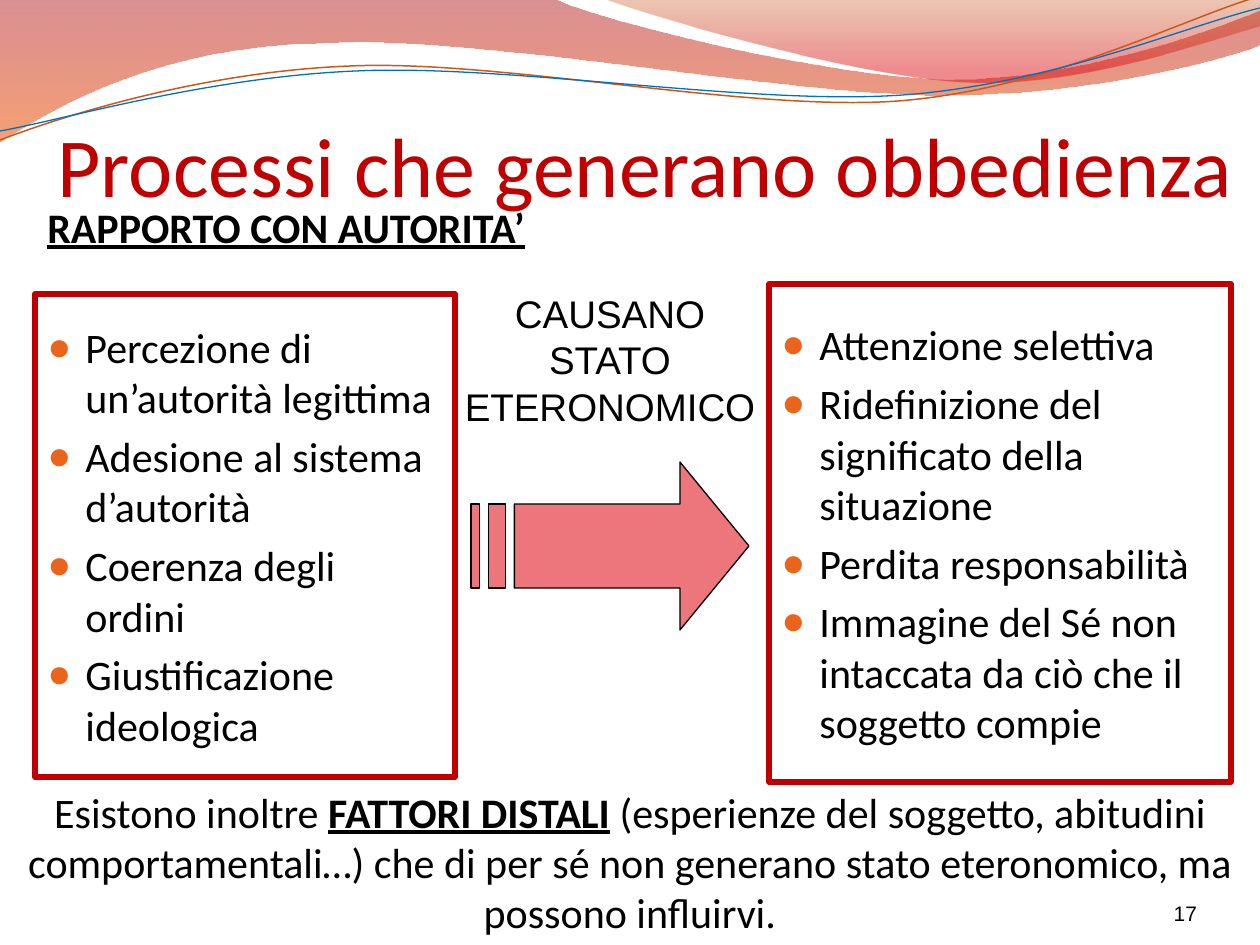
from lxml.etree import SubElement
from pptx import Presentation
from pptx.dml.color import RGBColor
from pptx.enum.shapes import MSO_SHAPE
from pptx.enum.text import MSO_ANCHOR, PP_ALIGN
from pptx.oxml.ns import qn
from pptx.util import Pt

SCALE = 914400 / 126

THEME = {
    "red": "C00000", "black": "000000", "arrow": "EC767C", "bullet": "EB641B",
    "title": 48, "body": 24, "label": 22, "number": 12,
    "font": "Calibri", "label_font": "Arial",
}

TITLE = "Processi che generano obbedienza"
HEADING = "RAPPORTO CON AUTORITA’"
LABEL = "CAUSANO STATO ETERONOMICO"
SLIDE_NUMBER = "17"
FOOTNOTE = [
    ("Esistono inoltre ", {}),
    ("FATTORI DISTALI", {"bold": True, "underline": True}),
    (" (esperienze del soggetto, abitudini comportamentali…) che di per sé "
     "non generano stato eteronomico, ma possono influirvi.", {}),
]
PANELS = [
    ((35, 294, 420, 483), [
        "Percezione di un’autorità legittima",
        "Adesione al sistema d’autorità",
        "Coerenza degli ordini",
        "Giustificazione ideologica",
    ]),
    ((769, 284, 462, 498), [
        "Attenzione selettiva",
        "Ridefinizione del significato della situazione",
        "Perdita responsabilità",
        "Immagine del Sé non intaccata da ciò che il soggetto compie",
    ]),
]

WAVES = [
    ([[(0, 0)], [(554, -1)],
      [(600, 21), (837, 79), (955, 79)], [(1074, 79), (1207, 33), (1260, 11)],
      [(1261, 45)],
      [(1239, 55), (1096, 96), (940, 95)], [(781, 95), (481, 35), (324, 43)],
      [(163, 45), (58, 105), (-1, 142)], [(0, 0)]],
     [(0, "AF0911", 45), (1, "EE5300", 55)]),
    ([[(604, -1)],
      [(641, 14), (859, 78), (969, 82)], [(1079, 87), (1211, 40), (1260, 26)],
      [(1260, 0)], [(604, -1)]],
     [(0, "C24400", 30), (0.8, "DC000B", 45)]),
]
RIBBONS = [
    ([[(0, 140)], [(60, 117), (199, 72), (349, 66)],
      [(498, 59), (747, 112), (898, 101)], [(1050, 89), (1182, 19), (1257, -3)]],
     "CF5818", 0.85),
    ([[(0, 131)], [(59, 121), (207, 77), (357, 71)],
      [(508, 64), (752, 106), (903, 95)], [(1053, 84), (1186, 26), (1260, 8)]],
     "0070C0", 0.75),
]
ARROW = (471, 462, 278, 168)
ARROW_HEAD = 69


def px(value):
    return round(value * SCALE)


def color(name):
    return RGBColor.from_string(THEME.get(name, name))


def add_outline(slide, contours, close=True):
    contours = [[(px(x), px(y)) for x, y in contour] for contour in contours]
    builder = slide.shapes.build_freeform(*contours[0][0])
    for index, contour in enumerate(contours):
        if index:
            builder.move_to(*contour[0])
        builder.add_line_segments(contour[1:], close=close)
    shape = builder.convert_to_shape()
    shape.shadow.inherit = False
    return shape


def add_curve(slide, segments, close):
    points = [point for segment in segments for point in segment]
    shape = add_outline(slide, [points], close)
    lines = iter(list(shape._element.spPr.iter(qn("a:lnTo"))))
    for segment in segments[1:]:
        group = [next(lines) for _ in segment]
        if len(group) == 3:
            curve = group[0].makeelement(qn("a:cubicBezTo"))
            group[0].addprevious(curve)
            for line in group:
                curve.append(line[0])
                line.getparent().remove(line)
    return shape


def set_line(shape, name, width):
    shape.line.color.rgb = color(name)
    shape.line.width = Pt(width)


def add_wave(slide, segments, stops):
    shape = add_curve(slide, segments, close=True)
    shape.line.fill.background()
    shape.fill.gradient()
    shape.fill.gradient_angle = 270
    for stop, (position, rgb, _) in zip(shape.fill.gradient_stops, stops):
        stop.position = position
        stop.color.rgb = color(rgb)
    for element, (_, _, alpha) in zip(shape._element.spPr.iter(qn("a:srgbClr")), stops):
        SubElement(element, qn("a:alpha"), val=str(alpha * 1000))


def add_ribbon(slide, segments, rgb, width):
    shape = add_curve(slide, segments, close=False)
    shape.fill.background()
    set_line(shape, rgb, width)


def add_arrow(slide):
    left, top, width, height = ARROW
    right, bottom, neck = left + width, top + height, left + width - ARROW_HEAD
    upper, lower = top + height / 4, bottom - height / 4
    unit = width / 32
    shaft = left + 5 * unit
    contours = [[(neck, top), (neck, upper), (shaft, upper), (shaft, lower),
                 (neck, lower), (neck, bottom), (right, top + height / 2)]]
    for start, end in ((2, 4), (0, 1)):
        x1, x2 = left + start * unit, left + end * unit
        contours.append([(x1, upper), (x1, lower), (x2, lower), (x2, upper)])
    shape = add_outline(slide, contours)
    shape.fill.solid()
    shape.fill.fore_color.rgb = color("arrow")
    set_line(shape, "black", 0.75)


def write(paragraph, runs, size="body", font="font", ink="black"):
    for text, extra in runs:
        run = paragraph.add_run()
        run.text = text
        run.font.color.rgb = color(ink)
        values = {"name": THEME[font], "size": Pt(THEME[size]), **extra}
        for name, value in values.items():
            setattr(run.font, name, value)


def add_text(slide, box, runs, align, frame_format=None, **style):
    frame = slide.shapes.add_textbox(*map(px, box)).text_frame
    for name, value in {"word_wrap": True, **(frame_format or {})}.items():
        setattr(frame, name, value)
    frame.paragraphs[0].alignment = align
    write(frame.paragraphs[0], runs, **style)


def add_panel(slide, box, items):
    shape = slide.shapes.add_shape(MSO_SHAPE.RECTANGLE, *map(px, box))
    shape.shadow.inherit = False
    shape.fill.background()
    set_line(shape, "red", 3)
    SubElement(shape.line._get_or_add_ln(), qn("a:round"))
    frame = shape.text_frame
    frame.word_wrap = True
    frame.vertical_anchor = MSO_ANCHOR.MIDDLE
    for index, item in enumerate(items):
        paragraph = frame.add_paragraph() if index else frame.paragraphs[0]
        paragraph.alignment = PP_ALIGN.LEFT
        paragraph.space_before = Pt(4.8)
        properties = paragraph._p.get_or_add_pPr()
        properties.set("marL", str(px(38)))
        properties.set("indent", str(px(-38)))
        bullet_color = SubElement(properties, qn("a:buClr"))
        SubElement(bullet_color, qn("a:srgbClr"), val=THEME["bullet"])
        SubElement(properties, qn("a:buSzPct"), val="95000")
        SubElement(properties, qn("a:buFont"), typeface=THEME["label_font"])
        SubElement(properties, qn("a:buChar"), char="●")
        write(paragraph, [(item, {})])


def main():
    presentation = Presentation()
    presentation.slide_width, presentation.slide_height = px(1260), px(945)
    slide = presentation.slides.add_slide(presentation.slide_layouts[6])
    for wave in WAVES:
        add_wave(slide, *wave)
    for ribbon in RIBBONS:
        add_ribbon(slide, *ribbon)
    bottom = {"vertical_anchor": MSO_ANCHOR.BOTTOM, "margin_left": 0, "margin_right": 0,
              "margin_bottom": 0}
    add_text(slide, (31, 105, 1228, 109), [(TITLE, {})], PP_ALIGN.CENTER, bottom,
             size="title", ink="red")
    for panel in PANELS:
        add_panel(slide, *panel)
    add_text(slide, (1092, 876, 105, 50), [(SLIDE_NUMBER, {})], PP_ALIGN.RIGHT, bottom,
             size="number", font="label_font")
    add_arrow(slide)
    add_text(slide, (451, 284, 318, 152), [(LABEL, {})], PP_ALIGN.CENTER,
             size="label", font="label_font")
    add_text(slide, (0, 780, 1260, 165), FOOTNOTE, PP_ALIGN.CENTER)
    add_text(slide, (35, 195, 514, 63), [(HEADING, {"bold": True, "underline": True})],
             PP_ALIGN.LEFT)
    presentation.save("out.pptx")


if __name__ == "__main__":
    main()
